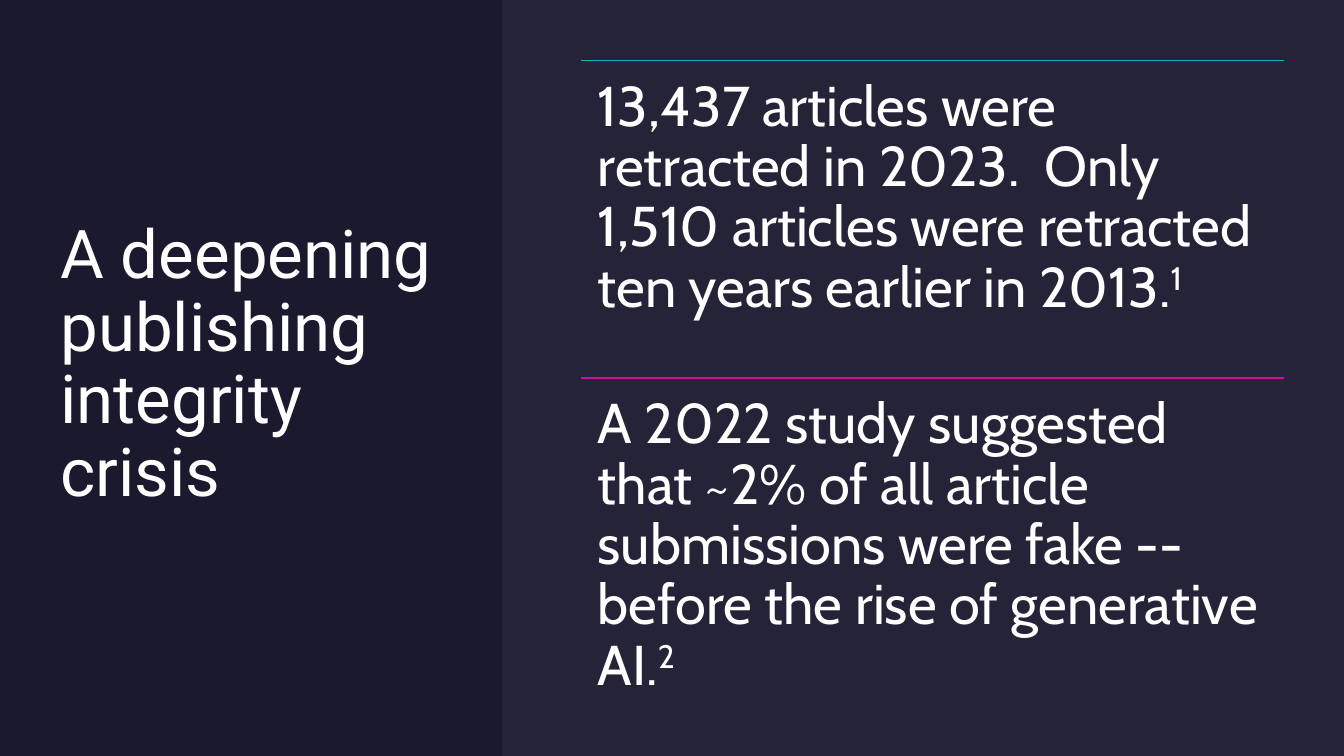
from lxml import etree
from pptx import Presentation
from pptx import util as u
from pptx.dml import color
from pptx.enum import shapes, text
from pptx.oxml import ns

TITLE = "A deepening publishing integrity crisis"
FINDINGS = [
    ("13,437 articles were retracted in 2023.  Only 1,510 articles were "
     "retracted ten years earlier in 2013.", "1", "12B1BF"),
    ("A 2022 study suggested that ~2% of all article submissions were fake "
     "-- before the rise of generative AI.", "2", "D40AA8"),
]
NAVY, LAVENDER, WHITE = "1B192E", "E4E3F0", "FFFFFF"
TITLE_FONT = {"name": "Roboto", "size": u.Pt(48)}
FINDING_FONT = {"name": "Cabin", "size": u.Pt(40)}
WIDTH, HEIGHT = 13.33, 7.5
PANEL_LEFT = 4.98
FINDING_LEFT, FINDING_TOP = 5.76, 0.6
FINDING_WIDTH, FINDING_HEIGHT = 6.97, 3.15


def inches(*lengths):
    return [u.Inches(length) for length in lengths]


def paint(target, value):
    if hasattr(target, "solid"):
        target.solid()
        target = target.fore_color
    target.rgb = color.RGBColor.from_string(value)


def add_words(paragraph, words, font):
    run = paragraph.add_run()
    run.text = words
    for name, value in font.items():
        setattr(run.font, name, value)
    paint(run.font.color, WHITE)
    return run


def add_passage(slide, place, inset, anchor):
    frame = slide.shapes.add_textbox(*inches(*place)).text_frame
    settings = {"word_wrap": True, "vertical_anchor": anchor,
                "auto_size": text.MSO_AUTO_SIZE.NONE}
    for side in ("left", "top", "right", "bottom"):
        settings["margin_" + side] = u.Inches(inset)
    for name, value in settings.items():
        setattr(frame, name, value)
    passage = frame.paragraphs[0]
    passage.line_spacing = 0.9
    return passage


def add_panel(slide):
    panel = slide.shapes.add_shape(
        shapes.MSO_SHAPE.RECTANGLE,
        *inches(PANEL_LEFT, 0, WIDTH - PANEL_LEFT, HEIGHT))
    panel.shadow.inherit = False
    panel.line.fill.background()
    paint(panel.fill, LAVENDER)
    tint = panel.fill._xPr.find(".//" + ns.qn("a:srgbClr"))
    etree.SubElement(tint, ns.qn("a:alpha"), val="5000")


def add_finding(slide, top, statement, note, accent):
    rule = slide.shapes.add_connector(
        shapes.MSO_CONNECTOR.STRAIGHT,
        *inches(FINDING_LEFT, top, FINDING_LEFT + FINDING_WIDTH, top))
    rule.line.width = u.Pt(1)
    paint(rule.line.fill, accent)
    etree.SubElement(rule._element.spPr, ns.qn("a:effectLst"))
    passage = add_passage(
        slide, (FINDING_LEFT, top, FINDING_WIDTH, FINDING_HEIGHT),
        0.17, text.MSO_ANCHOR.TOP)
    add_words(passage, statement, FINDING_FONT)
    superscript = add_words(passage, note, FINDING_FONT)
    superscript._r.get_or_add_rPr().set("baseline", "30000")


def main():
    deck = Presentation()
    deck.slide_width, deck.slide_height = inches(WIDTH, HEIGHT)
    slide = deck.slides.add_slide(deck.slide_layouts[6])
    paint(slide.background.fill, NAVY)
    title = add_passage(slide, (0.6, 0.6, 3.9, 6.06), 0,
                        text.MSO_ANCHOR.MIDDLE)
    add_words(title, TITLE, TITLE_FONT)
    add_panel(slide)
    for row, finding in enumerate(FINDINGS):
        add_finding(slide, FINDING_TOP + row * FINDING_HEIGHT, *finding)
    deck.save("out.pptx")


if __name__ == "__main__":
    main()
